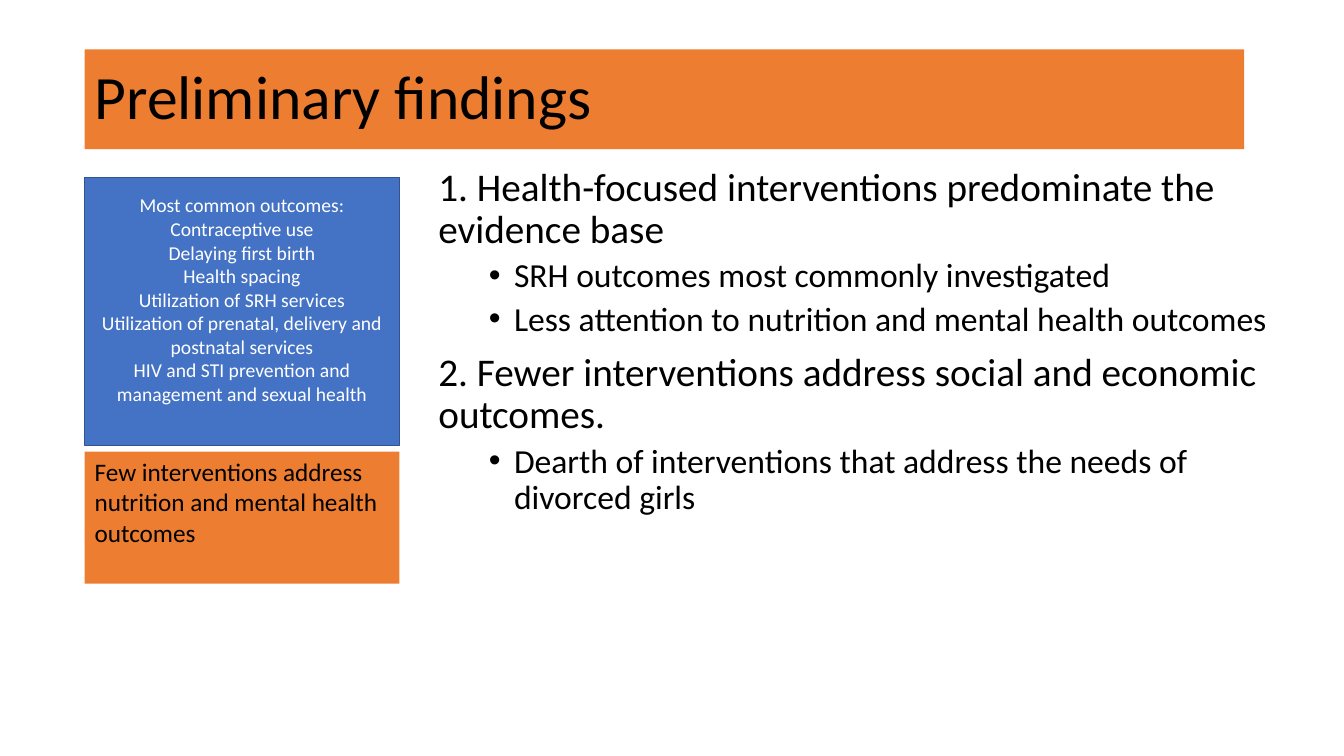
from lxml import etree
from pptx import Presentation
from pptx.dml.color import RGBColor
from pptx.enum.shapes import MSO_SHAPE
from pptx.enum.text import MSO_ANCHOR, PP_ALIGN
from pptx.oxml.ns import qn
from pptx.util import Inches, Pt

RECT = MSO_SHAPE.RECTANGLE
TOP, MID = MSO_ANCHOR.TOP, MSO_ANCHOR.MIDDLE
LEFT, CENTER = PP_ALIGN.LEFT, PP_ALIGN.CENTER

COLORS = {"orange": "ED7D31", "blue": "4472C4", "edge": "325491",
          "black": "000000", "white": "FFFFFF"}

TITLE = ["Preliminary findings"]
COMMON = [
    "Most common outcomes:",
    "Contraceptive use",
    "Delaying first birth",
    "Health spacing",
    "Utilization of SRH services",
    "Utilization of prenatal, delivery and postnatal services",
    "HIV and STI prevention and management and sexual health",
]
FEW = ["Few interventions address nutrition and mental health outcomes"]
FINDINGS = [
    ("1. Health-focused interventions predominate the evidence base",
     ["SRH outcomes most commonly investigated",
      "Less attention to nutrition and mental health outcomes"]),
    ("2. Fewer interventions address social and economic outcomes.",
     ["Dearth of interventions that address the needs of divorced girls"]),
]

EDGE, SIDE = 0.84, 3.12
PANELS = [
    {"lines": TITLE, "at": (EDGE, 0.49, 11.5, 0.99), "fill": "orange",
     "size": 44, "ink": "black", "anchor": MID, "space": 0.9},
    {"lines": COMMON, "at": (EDGE, 1.76, SIDE, 2.66), "fill": "blue",
     "size": 14, "ink": "white", "anchor": MID, "align": CENTER,
     "line": "edge", "foot": 0.29},
    {"lines": FEW, "at": (EDGE, 4.48, SIDE, 1.31), "fill": "orange",
     "size": 18, "ink": "black", "anchor": TOP},
]
BODY = (4.25, 1.61, 8.49, 5.17)


def color(name):
    return RGBColor.from_string(COLORS[name])


def write(para, text, size, ink, **form):
    para.text = text
    for key, value in form.items():
        setattr(para, key, value)
    para.font.name = "Calibri"
    para.font.size = Pt(size)
    para.font.color.rgb = color(ink)


def bullet(para):
    props = para._p.get_or_add_pPr()
    props.set("marL", str(Inches(0.75)))
    props.set("indent", str(Inches(-0.25)))
    etree.SubElement(props, qn("a:buFont")).set("typeface", "Arial")
    etree.SubElement(props, qn("a:buChar")).set("char", "•")


def next_para(frame, index):
    return frame.add_paragraph() if index else frame.paragraphs[0]


def add_panel(slide, panel):
    shape = slide.shapes.add_shape(RECT, *map(Inches, panel["at"]))
    shape.shadow.inherit = False
    shape.fill.solid()
    shape.fill.fore_color.rgb = color(panel["fill"])
    if "line" in panel:
        shape.line.color.rgb = color(panel["line"])
        shape.line.width = Pt(1)
    else:
        shape.line.fill.background()
    frame = shape.text_frame
    frame.word_wrap = True
    frame.vertical_anchor = panel["anchor"]
    frame.margin_bottom = Inches(panel.get("foot", 0.05))
    for i, text in enumerate(panel["lines"]):
        write(next_para(frame, i), text, panel["size"], panel["ink"],
              alignment=panel.get("align", LEFT),
              line_spacing=panel.get("space", 1.0))


def add_body(slide):
    frame = slide.shapes.add_textbox(*map(Inches, BODY)).text_frame
    frame.word_wrap = True
    for i, (head, points) in enumerate(FINDINGS):
        write(next_para(frame, i), head, 28, "black",
              line_spacing=0.9, space_before=Pt(10 if i else 0))
        for point in points:
            para = frame.add_paragraph()
            para.level = 1
            para.line_spacing = 0.9
            para.space_before = Pt(5)
            bullet(para)
            write(para, point, 24, "black")


def main():
    deck = Presentation()
    deck.slide_width, deck.slide_height = Inches(13.33), Inches(7.5)
    slide = deck.slides.add_slide(deck.slide_layouts[6])
    for panel in PANELS:
        add_panel(slide, panel)
    add_body(slide)
    deck.save("out.pptx")


if __name__ == "__main__":
    main()
